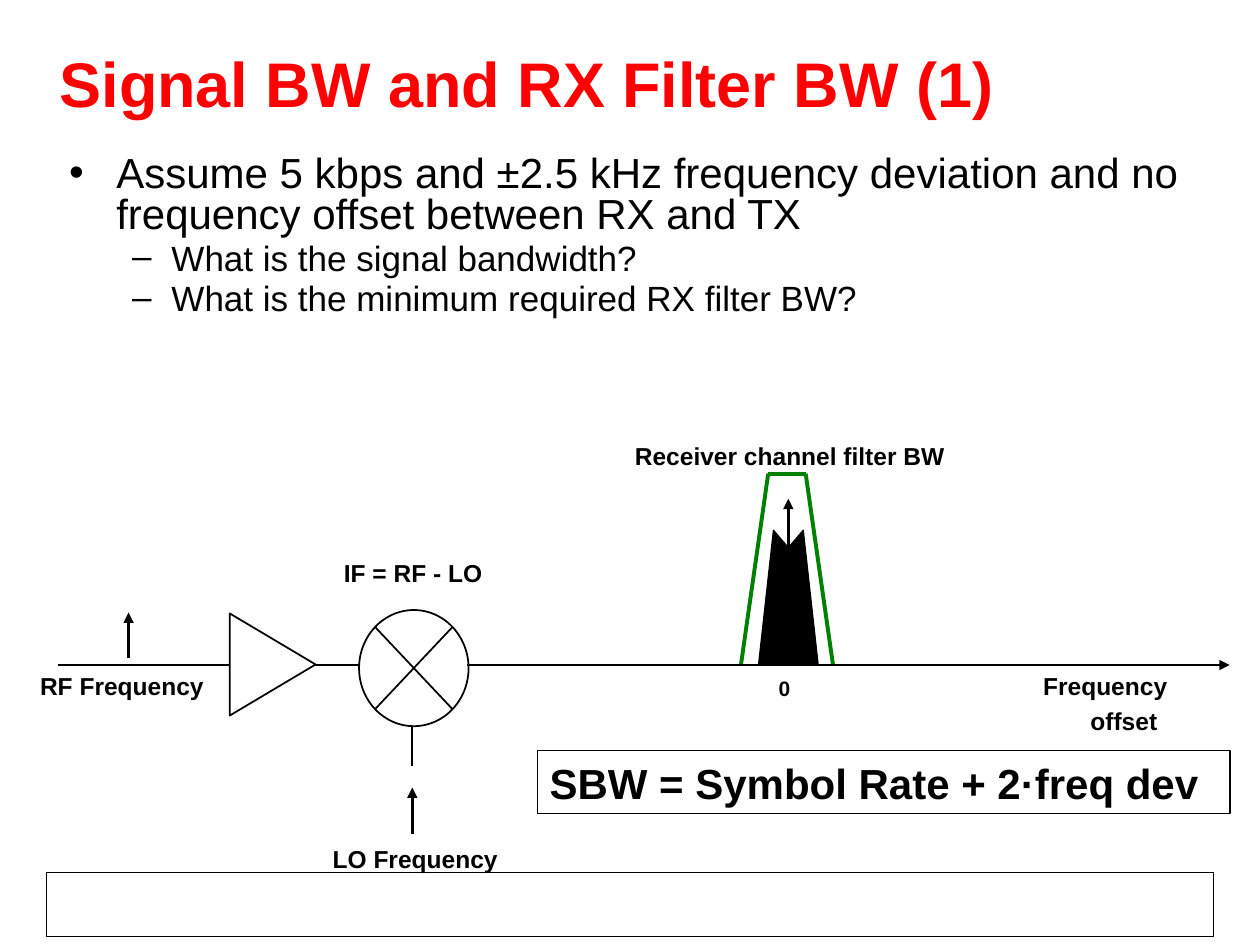
"""Build the slide on signal bandwidth and receiver filter bandwidth."""
from dataclasses import dataclass
from typing import Optional

from lxml.etree import SubElement
from pptx import Presentation
from pptx.dml.color import RGBColor
from pptx.enum.shapes import MSO_CONNECTOR, MSO_SHAPE
from pptx.enum.text import MSO_ANCHOR
from pptx.oxml.ns import qn
from pptx.util import Pt


@dataclass(frozen=True)
class Theme:
    font: str = "Arial"
    ink: RGBColor = RGBColor(0, 0, 0)
    heading: RGBColor = RGBColor(255, 0, 0)
    filter: RGBColor = RGBColor(0, 128, 0)
    title_size: float = 36
    body_size: float = 24
    sub_size: float = 20
    label_size: float = 14
    tick_size: float = 12
    frame_width: float = 0.75
    circuit_width: float = 1
    arrow_width: float = 1.5
    filter_width: float = 2.25


THEME = Theme()
AXIS = 380


@dataclass(frozen=True)
class Box:
    left: float
    top: float
    width: float
    height: float

    def lengths(self) -> tuple:
        return Pt(self.left), Pt(self.top), Pt(self.width), Pt(self.height)


@dataclass(frozen=True)
class Line:
    x1: float
    y1: float
    x2: float
    y2: float
    width: float = THEME.circuit_width
    arrow: bool = False
    color: RGBColor = THEME.ink


@dataclass(frozen=True)
class Entry:
    text: str
    size: float
    margin: float = 0
    hang: float = 0
    bullet: Optional[str] = None
    spacing: float = 1
    before: float = 0
    bold: bool = True
    color: RGBColor = THEME.ink


@dataclass(frozen=True)
class Label:
    text: str
    box: Box
    size: float = THEME.label_size
    wrap: bool = True


def write(frame, entries: list[Entry], wrap: bool = True) -> None:
    frame.word_wrap = wrap
    frame.text = "\n".join(entry.text for entry in entries)
    for paragraph, entry in zip(frame.paragraphs, entries):
        properties = paragraph._p.get_or_add_pPr()
        properties.set("marL", str(Pt(entry.margin)))
        properties.set("indent", str(-Pt(entry.hang)))
        if entry.bullet:
            SubElement(properties, qn("a:buFont")).set("typeface", THEME.font)
            SubElement(properties, qn("a:buChar")).set("char", entry.bullet)
        paragraph.line_spacing = entry.spacing
        paragraph.space_before = Pt(entry.before)
        for run in paragraph.runs:
            run.font.name = THEME.font
            run.font.size = Pt(entry.size)
            run.font.bold = entry.bold
            run.font.color.rgb = entry.color


def add_text(slide, box: Box, entries: list[Entry], wrap: bool = True):
    frame = slide.shapes.add_textbox(*box.lengths()).text_frame
    write(frame, entries, wrap)
    return frame


def add_label(slide, label: Label) -> None:
    entry = Entry(label.text, label.size, margin=27, hang=27, spacing=1.2)
    add_text(slide, label.box, [entry], label.wrap)


def add_line(shapes, line: Line) -> None:
    connector = shapes.add_connector(
        MSO_CONNECTOR.STRAIGHT, Pt(line.x1), Pt(line.y1), Pt(line.x2), Pt(line.y2))
    connector.line.color.rgb = line.color
    connector.line.width = Pt(line.width)
    if line.arrow:
        SubElement(connector.line._get_or_add_ln(), qn("a:tailEnd")).set("type", "triangle")
    SubElement(connector._element.spPr, qn("a:effectLst"))


def add_outline(slide, kind: MSO_SHAPE, box: Box, width: float):
    shape = slide.shapes.add_shape(kind, *box.lengths())
    shape.shadow.inherit = False
    shape.fill.background()
    shape.line.color.rgb = THEME.ink
    shape.line.width = Pt(width)
    return shape


def add_spectrum(slide) -> None:
    outline = [(433.5, 379.5), (442, 303), (450.5, 313), (459, 303), (467.5, 379.5)]
    points = [(Pt(x), Pt(y)) for x, y in outline]
    builder = slide.shapes.build_freeform(*points[0], scale=1.0)
    builder.add_line_segments(points[1:], close=True)
    spectrum = builder.convert_to_shape()
    spectrum.shadow.inherit = False
    spectrum.fill.solid()
    spectrum.fill.fore_color.rgb = THEME.ink
    spectrum.line.color.rgb = THEME.ink
    spectrum.line.width = Pt(THEME.frame_width)


def add_filter(slide) -> None:
    group = slide.shapes.add_group_shape()
    corners = [(423.4, AXIS), (439, 270.7), (460.4, 270.7), (476, AXIS)]
    for start, end in zip(corners, corners[1:]):
        add_line(group.shapes, Line(*start, *end, THEME.filter_width, color=THEME.filter))


def main() -> None:
    deck = Presentation()
    deck.slide_width, deck.slide_height = Pt(720), Pt(540)
    slide = deck.slides.add_slide(deck.slide_layouts[6])

    add_outline(slide, MSO_SHAPE.RECTANGLE, Box(26.6, 498.5, 666.7, 36.5), THEME.frame_width)
    heading = add_text(slide, Box(27, 0, 666, 93.6), [
        Entry("Signal BW and RX Filter BW (1)", THEME.title_size, color=THEME.heading)])
    heading.vertical_anchor = MSO_ANCHOR.MIDDLE

    questions = ["What is the signal bandwidth?", "What is the minimum required RX filter BW?"]
    add_text(slide, Box(32.4, 86, 666.7, 369), [
        Entry("Assume 5 kbps and ±2.5 kHz frequency deviation and no "
              "frequency offset between RX and TX",
              THEME.body_size, 27, 27, "•", 0.8, bold=False),
        *(Entry(question, THEME.sub_size, 58.5, 22.5, "–", 0.8, 4, False)
          for question in questions)])

    add_spectrum(slide)
    add_filter(slide)
    triangle = add_outline(
        slide, MSO_SHAPE.ISOSCELES_TRIANGLE, Box(126.7, 355.2, 58.3, 49), THEME.circuit_width)
    triangle.rotation = 90
    add_outline(slide, MSO_SHAPE.FLOWCHART_SUMMING_JUNCTION,
                Box(205.2, 348.6, 62.6, 66.4), THEME.circuit_width)

    for line in (
        Line(33, AXIS, 131, AXIS),
        Line(180, AXIS, 205.2, AXIS),
        Line(267.1, AXIS, 702.7, AXIS, arrow=True),
        Line(235.6, 415.4, 235.6, 438),
        Line(235.6, 476.6, 235.6, 450, THEME.arrow_width, True),
        Line(73.5, 376, 73.5, 350, THEME.arrow_width, True),
        Line(450.5, AXIS, 450.5, 285, THEME.arrow_width, True),
    ):
        add_line(slide.shapes, line)

    for label in (
        Label("Receiver channel filter BW", Box(355.7, 245, 198, 27)),
        Label("Frequency offset", Box(589, 376.5, 120, 47)),
        Label("0", Box(437.8, 379.5, 21, 24.5), THEME.tick_size, False),
        Label("RF Frequency", Box(15.8, 376.5, 142.6, 27)),
        Label("IF = RF - LO", Box(189.4, 312, 142.6, 27)),
        Label("LO Frequency", Box(183, 475.4, 142.6, 27)),
    ):
        add_label(slide, label)

    formula = add_outline(slide, MSO_SHAPE.RECTANGLE, Box(307, 429, 396, 36), THEME.frame_width)
    write(formula.text_frame, [Entry("SBW = Symbol Rate + 2·freq dev", THEME.body_size)])
    formula.text_frame.vertical_anchor = MSO_ANCHOR.MIDDLE
    for paragraph in formula.text_frame.paragraphs:
        paragraph.alignment = 1

    deck.save("out.pptx")


if __name__ == "__main__":
    main()
